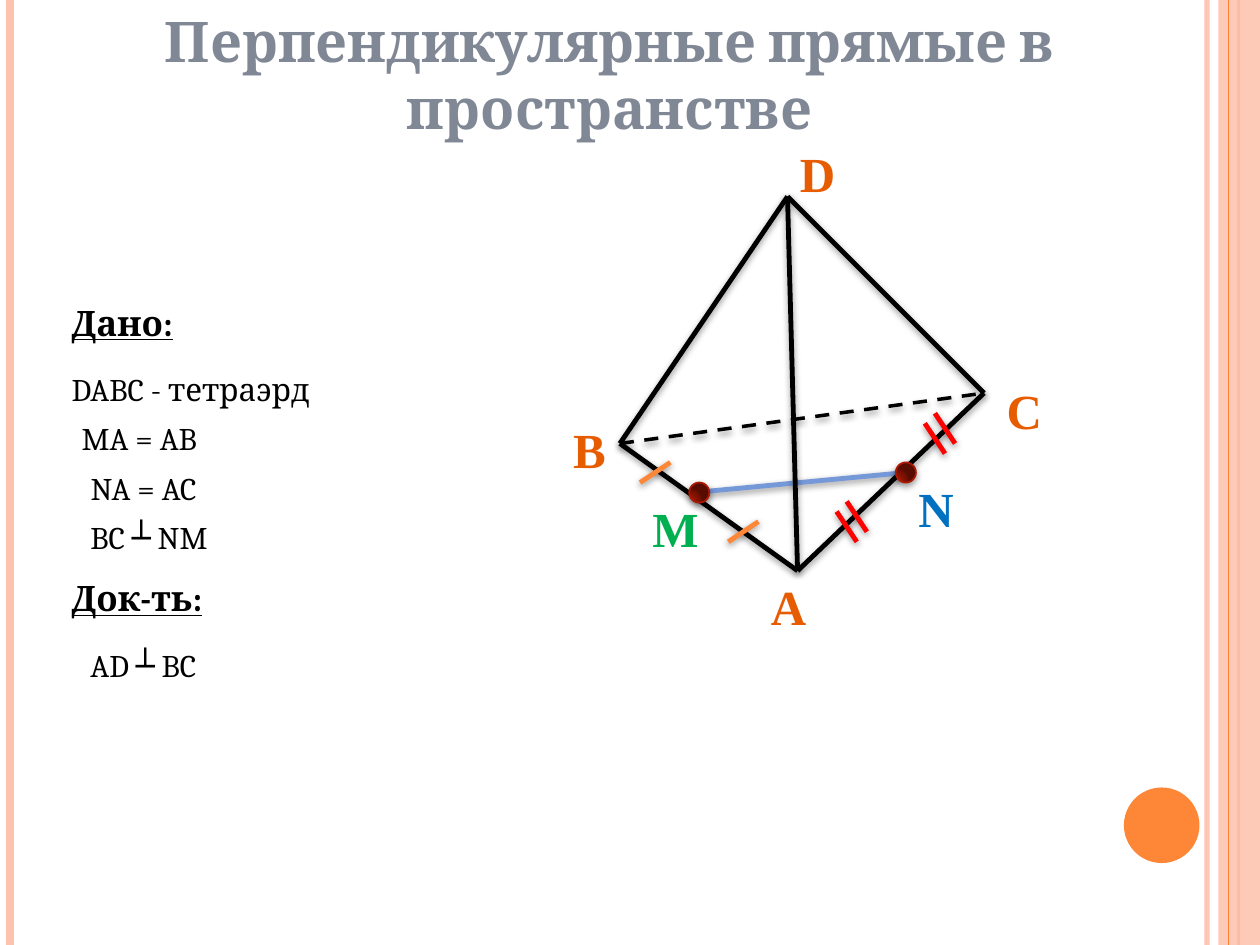
from dataclasses import dataclass

from lxml.etree import SubElement
from pptx import Presentation
from pptx.dml.color import RGBColor
from pptx.enum.dml import MSO_LINE
from pptx.enum.shapes import MSO_CONNECTOR, MSO_SHAPE
from pptx.enum.text import MSO_ANCHOR, MSO_AUTO_SIZE, PP_ALIGN
from pptx.oxml.ns import qn
from pptx.util import Inches, Pt


@dataclass(frozen=True)
class Theme:
    body_font: str = "Cambria"
    label_font: str = "Times New Roman"
    title_size: int = 32
    label_size: int = 28
    heading_size: int = 20
    body_size: int = 18
    stroke: float = 2.75
    black: str = "000000"
    title: str = "818895"
    peach: str = "FEC3AE"
    orange: str = "FE8637"
    vertex: str = "E75C01"
    green: str = "00B050"
    blue: str = "0070C0"
    red: str = "FF0000"
    segment: str = "7598D9"
    dot_line: str = "AC1800"
    dot_stops: tuple = ((0, "A41700"), (30, "9F1600"), (75, "771100"), (100, "580C00"))


def add_color(parent, color, alpha=100):
    node = SubElement(parent, qn("a:srgbClr"), val=color)
    if alpha < 100:
        SubElement(node, qn("a:alpha"), val=str(alpha * 1000))


def set_alpha(fill_parent, alpha):
    for color in fill_parent.iter(qn("a:srgbClr")):
        SubElement(color, qn("a:alpha"), val=str(alpha * 1000))


def add_effects(shape, shadow):
    """Give the shape an explicit effect list, with a soft drop shadow or empty."""
    effects = SubElement(shape._element.spPr, qn("a:effectLst"))
    if shadow:
        alpha, distance = shadow
        outer = SubElement(effects, qn("a:outerShdw"), blurRad=str(Pt(4)),
                           dist=str(Pt(distance)), dir="5400000", rotWithShape="0")
        add_color(outer, "000000", alpha)


def write_text(shape, text, *, font, size, color, bold=False, underline=False,
               align=PP_ALIGN.LEFT, wrap=True):
    frame = shape.text_frame
    frame.word_wrap = wrap
    frame.auto_size = MSO_AUTO_SIZE.SHAPE_TO_FIT_TEXT
    frame.vertical_anchor = MSO_ANCHOR.TOP
    frame.text = text
    paragraph = frame.paragraphs[0]
    paragraph.alignment = align
    paragraph.font.name = font
    paragraph.font.size = Pt(size)
    paragraph.font.bold = bold
    paragraph.font.underline = underline
    paragraph.font.color.rgb = RGBColor.from_string(color)


class SlideBuilder:
    SOFT = (42, 1.6)
    FAR = (40, 2)

    def __init__(self, slide, theme):
        self.slide = slide
        self.shapes = slide.shapes
        self.theme = theme

    def title(self, text, left, top, width, height):
        title = self.shapes.title
        title.left, title.top = Inches(left), Inches(top)
        title.width, title.height = Inches(width), Inches(height)
        write_text(title, text, font=self.theme.body_font, size=self.theme.title_size,
                   color=self.theme.title, bold=True, align=PP_ALIGN.CENTER)

    def text(self, text, left, top, width, height, **style):
        box = self.shapes.add_textbox(Inches(left), Inches(top), Inches(width), Inches(height))
        write_text(box, text, **style)

    def line(self, start, end, color, width, shadow=None, dash=None, alpha=100):
        line = self.shapes.add_connector(MSO_CONNECTOR.STRAIGHT,
                                         *map(Inches, start), *map(Inches, end))
        line.line.color.rgb = RGBColor.from_string(color)
        line.line.width = Pt(width)
        if dash:
            line.line.dash_style = dash
        if alpha < 100:
            set_alpha(line._element.spPr, alpha)
        add_effects(line, shadow)

    def filled(self, kind, left, top, width, height, color, alpha=100):
        shape = self.shapes.add_shape(kind, Inches(left), Inches(top),
                                      Inches(width), Inches(height))
        shape.shadow.inherit = False
        shape.fill.solid()
        shape.fill.fore_color.rgb = RGBColor.from_string(color)
        if alpha < 100:
            set_alpha(shape._element.spPr, alpha)
        shape.line.fill.background()

    def dot(self, left, top, size=0.16):
        dot = self.shapes.add_shape(MSO_SHAPE.OVAL, Inches(left), Inches(top),
                                    Inches(size), Inches(size))
        properties = dot._element.spPr
        gradient = SubElement(properties, qn("a:gradFill"), rotWithShape="1")
        stops = SubElement(gradient, qn("a:gsLst"))
        for position, color in self.theme.dot_stops:
            add_color(SubElement(stops, qn("a:gs"), pos=str(position * 1000)), color)
        radial = SubElement(gradient, qn("a:path"), path="circle")
        SubElement(radial, qn("a:fillToRect"), l="5000", t="100000", r="120000", b="10000")
        dot.line.color.rgb = RGBColor.from_string(self.theme.dot_line)
        dot.line.width = Pt(1)
        add_effects(dot, self.SOFT)


def main():
    theme = Theme()
    deck = Presentation()
    deck.slide_width, deck.slide_height = Inches(10), Inches(7.5)
    page = SlideBuilder(deck.slides.add_slide(deck.slide_layouts[5]), theme)

    # Side stripes and corner circle
    def stripe(x, color, width, alpha=100):
        page.line((x, 0), (x, 7.5), color, width, alpha=alpha)

    stripe(9.58, theme.peach, 3, alpha=93)
    stripe(0.08, theme.peach, 4.5)
    stripe(9.83, theme.orange, 1.5)
    page.filled(MSO_SHAPE.RECTANGLE, 9.67, 0, 0.33, 7.5, theme.peach, alpha=87)
    stripe(9.75, theme.orange, 0.75)
    page.filled(MSO_SHAPE.OVAL, 8.92, 6.25, 0.6, 0.6, theme.orange)

    page.title("Перпендикулярные прямые в пространстве", 0.23, 0, 9.22, 1.18)

    # Segment MN lies behind the tetrahedron
    page.line((5.5, 3.91), (7.19, 3.75), theme.segment, theme.stroke, page.SOFT)

    # Tetrahedron edges
    vertices = {"A": (6.33, 4.53), "B": (4.92, 3.52), "C": (7.81, 3.12), "D": (6.25, 1.56)}
    for start, end in ("DB", "DA", "DC", "BA", "AC"):
        page.line(vertices[start], vertices[end], theme.black, theme.stroke, page.SOFT)
    page.line(vertices["B"], vertices["C"], theme.black, 2, page.FAR, MSO_LINE.DASH)

    # Midpoints M and N
    for left, top in ((5.47, 3.83), (7.11, 3.67)):
        page.dot(left, top)

    # Point labels
    labels = (("A", 6.02, 4.53, theme.vertex), ("C", 7.89, 2.97, theme.vertex),
              ("B", 4.45, 3.28, theme.vertex), ("D", 6.25, 1.09, theme.vertex),
              ("M", 5.08, 3.91, theme.green), ("N", 7.19, 3.75, theme.blue))
    for name, left, top, color in labels:
        page.text(name, left, top, 0.85, 0.57, font=theme.label_font,
                  size=theme.label_size, color=color, bold=True)

    # Equal-length ticks: single on AB, double on AC
    for x, y in ((5.78, 4.3), (5.08, 3.83)):
        page.line((x, y), (x + 0.24, y - 0.16), theme.orange, theme.stroke, page.SOFT)
    for x, y in ((6.64, 4.06), (7.34, 3.36)):
        for shift in (0, 0.08):
            page.line((x + shift, y - shift), (x + shift + 0.16, y - shift + 0.24),
                      theme.red, theme.stroke, page.SOFT)

    # Given and to prove
    for heading, top in (("Дано:", 2.34), ("Док-ть:", 4.53)):
        page.text(heading, 0.47, top, 1.88, 0.44, font=theme.body_font,
                  size=theme.heading_size, color=theme.black, bold=True, underline=True)
    statements = (("DABC - тетраэрд", 0.47, 2.89, 2.34, True),
                  ("MA = AB", 0.55, 3.28, 1.48, True),
                  ("NA = AC", 0.62, 3.67, 1.48, True),
                  ("BC ┴ NM", 0.62, 4.06, 1.33, True),
                  ("AD ┴ BC", 0.62, 5.08, 1.26, False))
    for statement, left, top, width, wrap in statements:
        page.text(statement, left, top, width, 0.4, font=theme.body_font,
                  size=theme.body_size, color=theme.black, wrap=wrap)

    deck.save("out.pptx")


if __name__ == "__main__":
    main()
